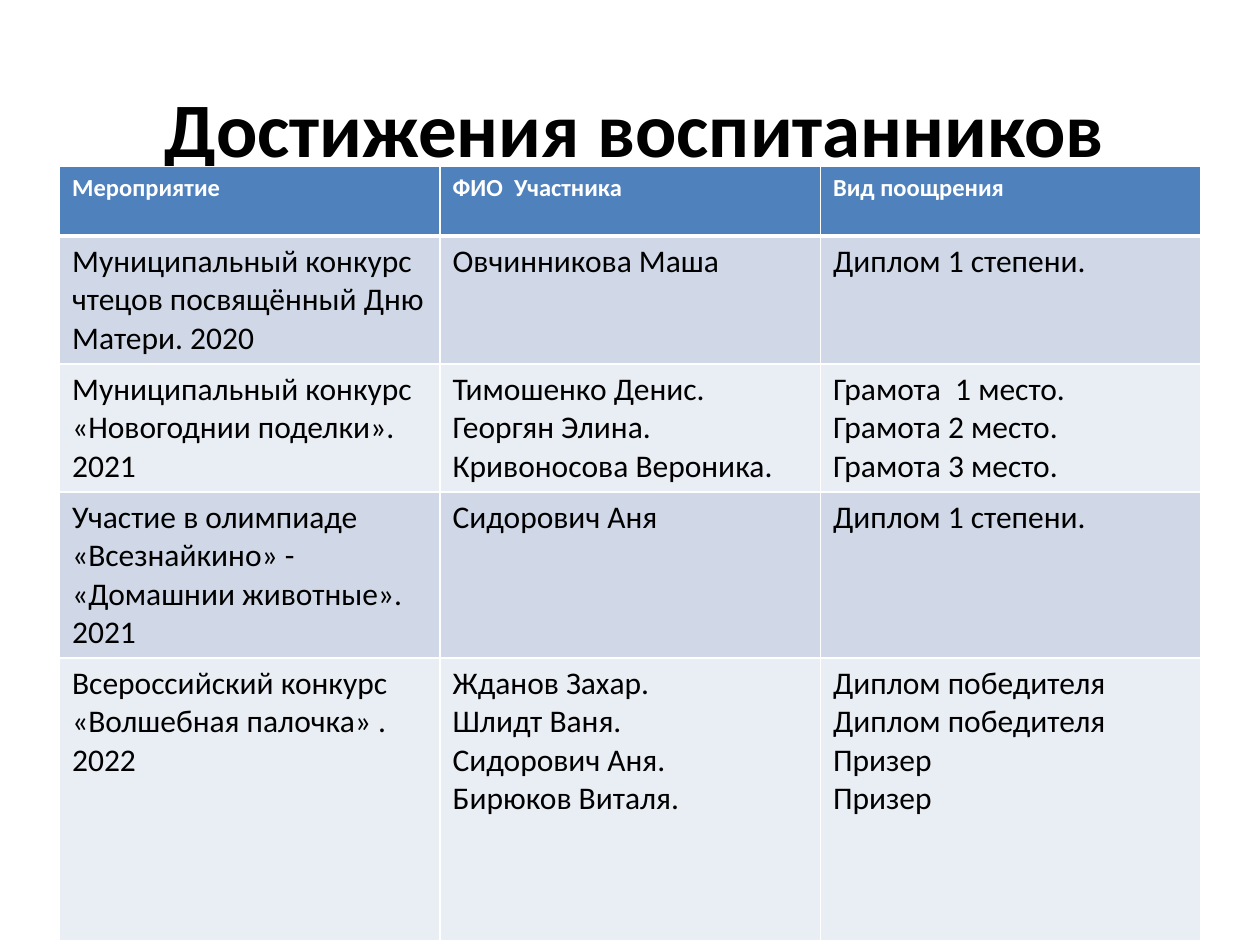
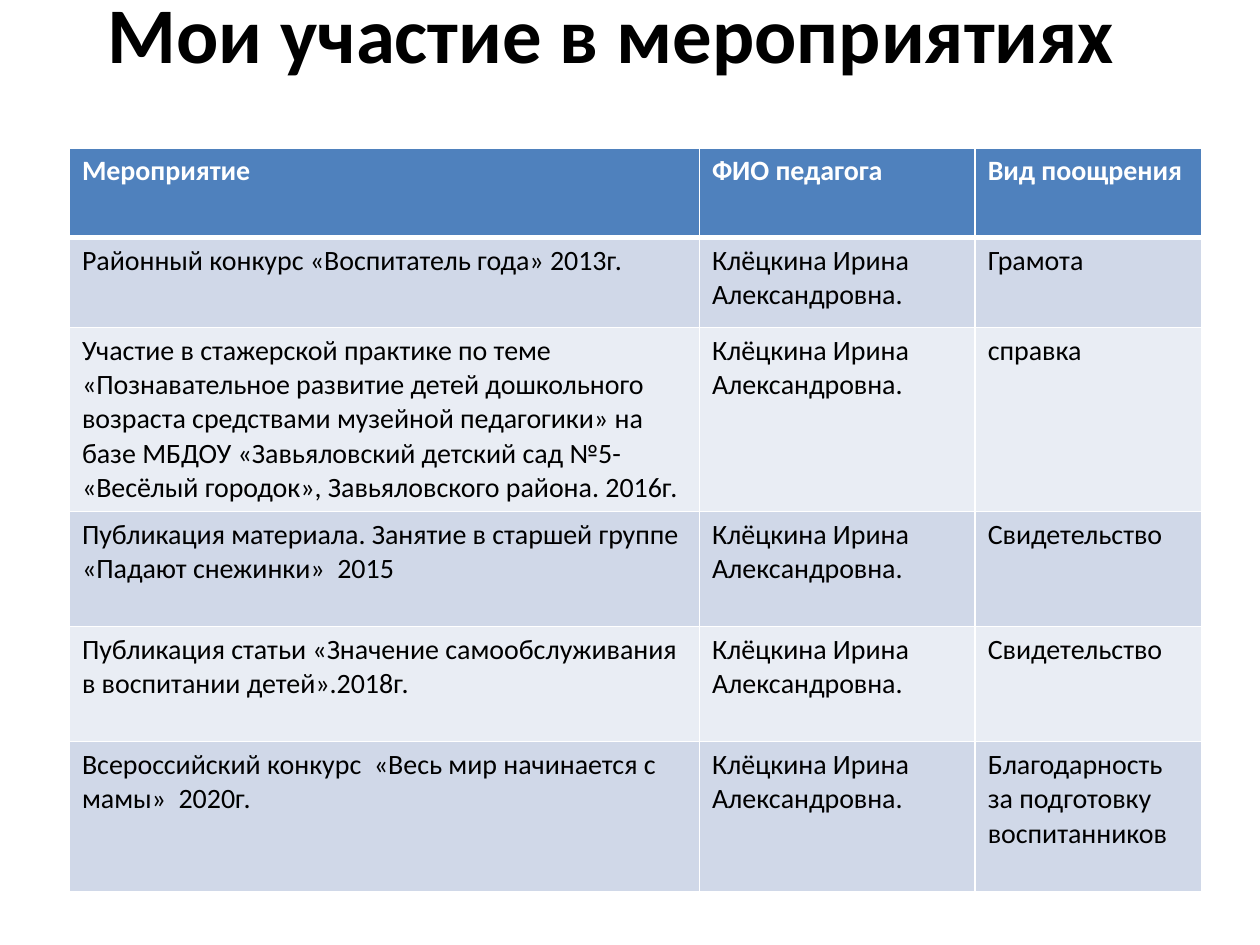
"""Build two slides, each with a title and a table of achievements."""
import pptx
import pptx.dml.color
import pptx.enum.text
import pptx.oxml
import pptx.oxml.ns
import pptx.util

Cm = pptx.util.Cm
Pt = pptx.util.Pt

FONT = "Calibri"
WHITE, BLACK, HEADER_BLUE = "FFFFFF", "000000", "4F81BD"
BANDS = ("D0D8E8", "E9EDF4")
TEACHER = "Клёцкина Ирина Александровна."

PAGES = [
    {
        "title": "Достижения воспитанников",
        "title_height": 5.13, "title_size": 44,
        "title_insets": (3, 0, 0.25, 0),
        "table_at": (1.2, 3.36),
        "columns": (7.67, 7.67, 7.67),
        "heights": (1.4, 2.58, 2.58, 3.35, 5.7),
        "header_size": 14, "body_size": 18,
        "rows": [
            ("Мероприятие", "ФИО  Участника", "Вид поощрения"),
            ("Муниципальный конкурс чтецов посвящённый Дню Матери. 2020",
             "Овчинникова Маша", "Диплом 1 степени."),
            ("Муниципальный конкурс «Новогоднии поделки». 2021",
             "Тимошенко Денис.\nГеоргян Элина.\nКривоносова Вероника.",
             "Грамота  1 место.\nГрамота 2 место.\nГрамота 3 место."),
            ("Участие в олимпиаде «Всезнайкино» - «Домашнии животные». 2021",
             "Сидорович Аня", "Диплом 1 степени."),
            ("Всероссийский конкурс «Волшебная палочка» . 2022",
             "Жданов Захар.\nШлидт Ваня.\nСидорович Аня.\nБирюков Виталя.",
             "Диплом победителя\nДиплом победителя\nПризер\nПризер"),
        ],
    },
    {
        "title": "Мои участие в мероприятиях",
        "title_height": 3.18, "title_size": 45,
        "title_insets": (2.03, 0, 0.25, 1.9),
        "table_at": (1.4, 2.98),
        "columns": (12.7, 5.56, 4.57),
        "heights": (1.81, 1.81, 3.71, 2.32, 2.32, 3.02),
        "header_size": 16, "body_size": 16,
        "rows": [
            ("Мероприятие", "ФИО педагога", "Вид поощрения"),
            ("Районный конкурс «Воспитатель года» 2013г.", TEACHER, "Грамота"),
            ("Участие в стажерской практике по теме «Познавательное развитие "
             "детей дошкольного возраста средствами музейной педагогики» на "
             "базе МБДОУ «Завьяловский детский сад №5- «Весёлый городок», "
             "Завьяловского района. 2016г.", TEACHER, "справка"),
            ("Публикация материала. Занятие в старшей группе "
             "«Падают снежинки»  2015", TEACHER, "Свидетельство"),
            ("Публикация статьи «Значение самообслуживания в воспитании "
             "детей».2018г.", TEACHER, "Свидетельство"),
            ("Всероссийский конкурс  «Весь мир начинается с мамы»  2020г.",
             TEACHER, "Благодарность за подготовку воспитанников"),
        ],
    },
]


def color(value):
    return pptx.dml.color.RGBColor.from_string(value)


def write(frame, text, size, ink=BLACK, bold=False, align="LEFT"):
    frame.word_wrap = True
    for index, line in enumerate(text.split("\n")):
        paragraph = frame.add_paragraph() if index else frame.paragraphs[0]
        paragraph.alignment = pptx.enum.text.PP_ALIGN[align]
        run = paragraph.add_run()
        run.text = line
        run.font.name = FONT
        run.font.size = Pt(size)
        run.font.bold = bold
        run.font.color.rgb = color(ink)


def draw_borders(cell, **widths):
    properties = cell._tc.get_or_add_tcPr()
    for position, side in enumerate("LRTB"):
        border = pptx.oxml.parse_xml(
            f'<a:ln{side} {pptx.oxml.ns.nsdecls("a")} w="{Pt(widths.get(side, 1))}">'
            f'<a:solidFill><a:srgbClr val="{WHITE}"/></a:solidFill></a:ln{side}>')
        properties.insert(position, border)


def add_title(slide, page):
    title = slide.shapes.add_textbox(0, 0, Cm(22.86), Cm(page["title_height"]))
    frame = title.text_frame
    frame.vertical_anchor = pptx.enum.text.MSO_ANCHOR.MIDDLE
    (frame.margin_left, frame.margin_top,
     frame.margin_right, frame.margin_bottom) = map(Cm, page["title_insets"])
    write(frame, page["title"], page["title_size"], bold=True, align="CENTER")


def add_achievements(slide, page):
    rows, columns, heights = page["rows"], page["columns"], page["heights"]
    left, top = page["table_at"]
    achievements = slide.shapes.add_table(
        len(rows), len(columns), Cm(left), Cm(top),
        Cm(sum(columns)), Cm(sum(heights))).table
    for column, width in zip(achievements.columns, columns):
        column.width = Cm(width)
    for row_index, (row, height) in enumerate(zip(rows, heights)):
        achievements.rows[row_index].height = Cm(height)
        header = row_index == 0
        for column_index, text in enumerate(row):
            cell = achievements.cell(row_index, column_index)
            cell.fill.solid()
            cell.fill.fore_color.rgb = color(
                HEADER_BLUE if header else BANDS[(row_index - 1) % 2])
            draw_borders(cell, B=3 if header else 1, T=3 if row_index == 1 else 1)
            write(cell.text_frame, text,
                  page["header_size"] if header else page["body_size"],
                  ink=WHITE if header else BLACK, bold=header)


def main():
    deck = pptx.Presentation()
    deck.slide_width, deck.slide_height = Cm(25.4), Cm(19.05)
    for page in PAGES:
        slide = deck.slides.add_slide(deck.slide_layouts[6])
        add_title(slide, page)
        add_achievements(slide, page)
    deck.save("out.pptx")


if __name__ == "__main__":
    main()
